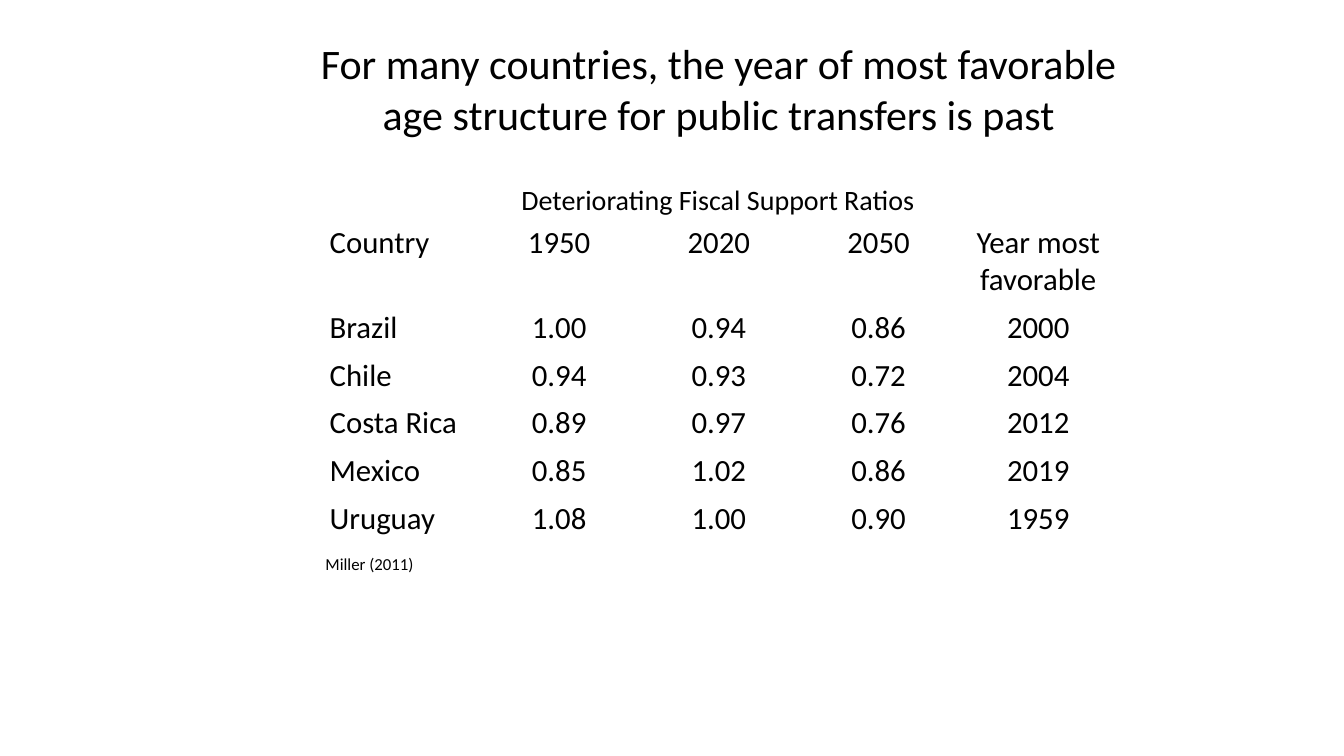
from pptx import Presentation
from pptx.dml.color import RGBColor
from pptx.enum.text import MSO_ANCHOR as Anchor, PP_ALIGN as Align
from pptx.util import Inches, Pt

TITLE = "For many countries, the year of most favorable age structure for public transfers is past"
TABLE_HEADING = "Deteriorating Fiscal Support Ratios"
CITATION = "Miller (2011)"
SUPPORT_RATIOS = [
    ("Country", "1950", "2020", "2050", "Year most favorable"),
    ("Brazil", "1.00", "0.94", "0.86", "2000"),
    ("Chile", "0.94", "0.93", "0.72", "2004"),
    ("Costa Rica", "0.89", "0.97", "0.76", "2012"),
    ("Mexico", "0.85", "1.02", "0.86", "2019"),
    ("Uruguay", "1.08", "1.00", "0.90", "1959"),
]
INK = "000000"
FONT = "Calibri"
TABLE_LEFT, TABLE_TOP, TABLE_WIDTH = 3.17, 2.17, 7.92
HEADER_HEIGHT, ROW_HEIGHT = 0.85, 0.47


def color(code):
    return RGBColor.from_string(code)


def write(frame, text, size, align=Align.LEFT, anchor=Anchor.TOP, wrap=True):
    frame.word_wrap = wrap
    frame.vertical_anchor = anchor
    paragraph = frame.paragraphs[0]
    paragraph.alignment = align
    run = paragraph.add_run()
    run.text = text
    run.font.name = FONT
    run.font.size = Pt(size)
    run.font.bold = False
    run.font.color.rgb = color(INK)


def add_text(slide, box, text, **text_format):
    frame = slide.shapes.add_textbox(*map(Inches, box)).text_frame
    write(frame, text, **text_format)


def add_ratio_table(slide):
    row_count, column_count = len(SUPPORT_RATIOS), len(SUPPORT_RATIOS[0])
    height = HEADER_HEIGHT + (row_count - 1) * ROW_HEIGHT
    box = map(Inches, (TABLE_LEFT, TABLE_TOP, TABLE_WIDTH, height))
    table = slide.shapes.add_table(row_count, column_count, *box).table
    table.first_row = table.horz_banding = False
    for r, values in enumerate(SUPPORT_RATIOS):
        table.rows[r].height = Inches(ROW_HEIGHT if r else HEADER_HEIGHT)
        for c, value in enumerate(values):
            cell = table.cell(r, c)
            cell.fill.background()
            write(cell.text_frame, value, size=22,
                  align=Align.CENTER if c else Align.LEFT)


def main():
    deck = Presentation()
    deck.slide_width, deck.slide_height = Inches(13.33), Inches(7.5)
    slide = deck.slides.add_slide(deck.slide_layouts[6])
    add_ratio_table(slide)
    add_text(slide, (2.92, 0.25, 8.42, 1.25), TITLE,
             size=30, align=Align.CENTER, anchor=Anchor.MIDDLE)
    add_text(slide, (5.05, 1.76, 4.14, 0.44), TABLE_HEADING,
             size=20, align=Align.CENTER, wrap=False)
    add_text(slide, (3.13, 5.44, 2.23, 0.3), CITATION, size=12)
    deck.save("out.pptx")


if __name__ == "__main__":
    main()
